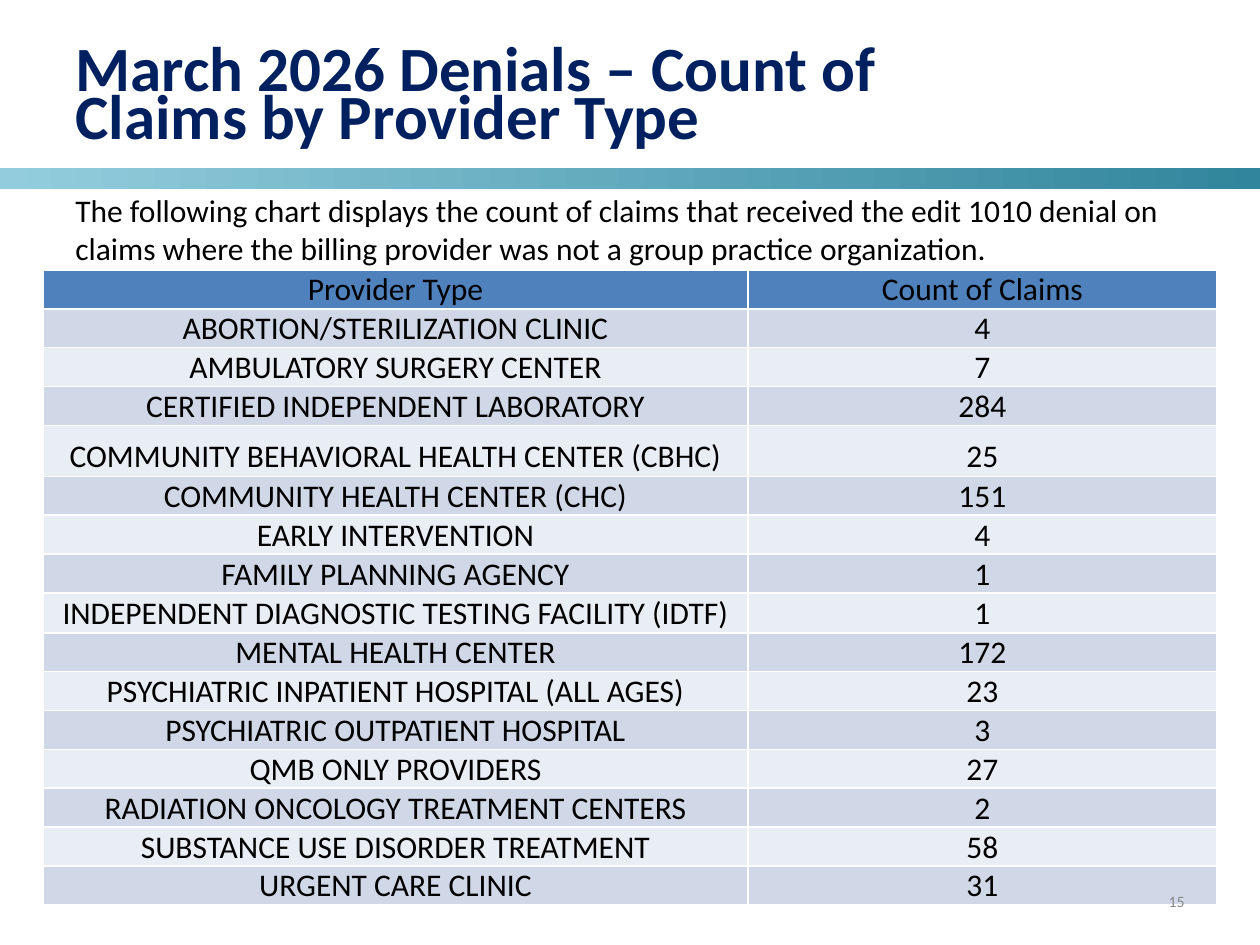
from dataclasses import dataclass

from pptx import Presentation
from pptx.dml.color import RGBColor
from pptx.enum.shapes import MSO_SHAPE
from pptx.enum.text import MSO_ANCHOR, MSO_AUTO_SIZE, PP_ALIGN
from pptx.util import Emu, Pt

RECTANGLE = MSO_SHAPE.RECTANGLE
LEFT, CENTER, RIGHT = PP_ALIGN.LEFT, PP_ALIGN.CENTER, PP_ALIGN.RIGHT
TOP, MIDDLE, BOTTOM = MSO_ANCHOR.TOP, MSO_ANCHOR.MIDDLE, MSO_ANCHOR.BOTTOM
FIXED, GROW = MSO_AUTO_SIZE.NONE, MSO_AUTO_SIZE.SHAPE_TO_FIT_TEXT
TITLE_ONLY_LAYOUT = 5
PX_PER_INCH = 126


@dataclass(frozen=True)
class Theme:
    font: str = "Calibri"
    title: str = "002060"
    text: str = "000000"
    muted: str = "898989"
    band_dark: str = "31859C"
    band_light: str = "93CDDD"
    header: str = "4F81BD"
    row_odd: str = "D0D8E8"
    row_even: str = "E9EDF4"
    title_size: int = 36
    title_leading: int = 27
    body_size: int = 18
    number_size: int = 9


@dataclass(frozen=True)
class Area:
    left: int
    top: int
    width: int
    height: int

    def emu(self) -> tuple[Emu, ...]:
        return tuple(px(n) for n in (self.left, self.top, self.width, self.height))


@dataclass(frozen=True)
class ClaimRow:
    provider: str
    count: int
    height: int = 38


THEME = Theme()
HEADINGS = ("Provider Type", "Count of Claims")
COLUMN_WIDTHS = (705, 469)
HEADER_HEIGHT = 38
CLAIMS = (
    ClaimRow("ABORTION/STERILIZATION CLINIC", 4),
    ClaimRow("AMBULATORY SURGERY CENTER", 7),
    ClaimRow("CERTIFIED INDEPENDENT LABORATORY", 284),
    ClaimRow("COMMUNITY BEHAVIORAL HEALTH CENTER (CBHC)", 25, 51),
    ClaimRow("COMMUNITY HEALTH CENTER (CHC)", 151),
    ClaimRow("EARLY INTERVENTION", 4),
    ClaimRow("FAMILY PLANNING AGENCY", 1),
    ClaimRow("INDEPENDENT DIAGNOSTIC TESTING FACILITY (IDTF)", 1, 40),
    ClaimRow("MENTAL HEALTH CENTER", 172),
    ClaimRow("PSYCHIATRIC INPATIENT HOSPITAL (ALL AGES)", 23),
    ClaimRow("PSYCHIATRIC OUTPATIENT HOSPITAL", 3),
    ClaimRow("QMB ONLY PROVIDERS", 27),
    ClaimRow("RADIATION ONCOLOGY TREATMENT CENTERS", 2),
    ClaimRow("SUBSTANCE USE DISORDER TREATMENT", 58),
    ClaimRow("URGENT CARE CLINIC", 31),
)


def px(length: int) -> Emu:
    return Emu(round(length * 914400 / PX_PER_INCH))


def rgb(color: str) -> RGBColor:
    return RGBColor.from_string(color)


def write(frame, text: str, size: int, color: str, align=LEFT, bold: bool = False):
    """Fill a text frame with one formatted paragraph and return it."""
    frame.text = text
    para = frame.paragraphs[0]
    para.alignment = align
    para.font.name = THEME.font
    para.font.size = Pt(size)
    para.font.bold = bold
    para.font.color.rgb = rgb(color)
    return para


def set_frame(frame, anchor, auto_size) -> None:
    frame.word_wrap = True
    frame.vertical_anchor = anchor
    frame.auto_size = auto_size


def add_band(page, area: Area) -> None:
    band = page.shapes.add_shape(RECTANGLE, *area.emu())
    band.shadow.inherit = False
    band.line.fill.background()
    band.fill.gradient()
    band.fill.gradient_angle = 180
    for stop, color in zip(band.fill.gradient_stops, (THEME.band_dark, THEME.band_light)):
        stop.color.rgb = rgb(color)


def set_title(page, area: Area, text: str) -> None:
    title = page.shapes.title
    title.left, title.top, title.width, title.height = area.emu()
    set_frame(title.text_frame, BOTTOM, FIXED)
    para = write(title.text_frame, text, THEME.title_size, THEME.title, bold=True)
    para.line_spacing = Pt(THEME.title_leading)


def add_text(page, area: Area, text: str, size: int, color: str,
             align=LEFT, anchor=TOP, auto_size=FIXED) -> None:
    box = page.shapes.add_textbox(*area.emu())
    set_frame(box.text_frame, anchor, auto_size)
    write(box.text_frame, text, size, color, align)


def fill_cell(cell, text: str, color: str) -> None:
    cell.fill.solid()
    cell.fill.fore_color.rgb = rgb(color)
    cell.vertical_anchor = BOTTOM
    cell.margin_left = cell.margin_right = cell.margin_top = px(1)
    cell.margin_bottom = 0
    write(cell.text_frame, text, THEME.body_size, THEME.text, CENTER)


def add_claims_table(page, left: int, top: int) -> None:
    heights = [HEADER_HEIGHT] + [claim.height for claim in CLAIMS]
    lines = [HEADINGS] + [(claim.provider, str(claim.count)) for claim in CLAIMS]
    area = Area(left, top, sum(COLUMN_WIDTHS), sum(heights))
    table = page.shapes.add_table(len(lines), len(HEADINGS), *area.emu()).table
    for column, width in zip(table.columns, COLUMN_WIDTHS):
        column.width = px(width)
    for index, (row, height, line) in enumerate(zip(table.rows, heights, lines)):
        row.height = px(height)
        stripe = THEME.row_odd if index % 2 else THEME.row_even
        for cell, text in zip(row.cells, line):
            fill_cell(cell, text, stripe if index else THEME.header)


def main() -> None:
    deck = Presentation()
    deck.slide_width, deck.slide_height = px(1260), px(945)
    page = deck.slides.add_slide(deck.slide_layouts[TITLE_ONLY_LAYOUT])
    add_band(page, Area(0, 168, 1260, 21))
    set_title(page, Area(63, 42, 903, 116),
              "March 2026 Denials – Count of Claims by Provider Type")
    add_text(page, Area(63, 185, 1134, 89),
             "The following chart displays the count of claims that received the edit 1010 "
             "denial on claims where the billing provider was not a group practice organization.",
             THEME.body_size, THEME.text, auto_size=GROW)
    add_claims_table(page, 43, 270)
    add_text(page, Area(903, 876, 294, 50), "15", THEME.number_size, THEME.muted,
             RIGHT, MIDDLE)
    deck.save("out.pptx")


if __name__ == "__main__":
    main()
